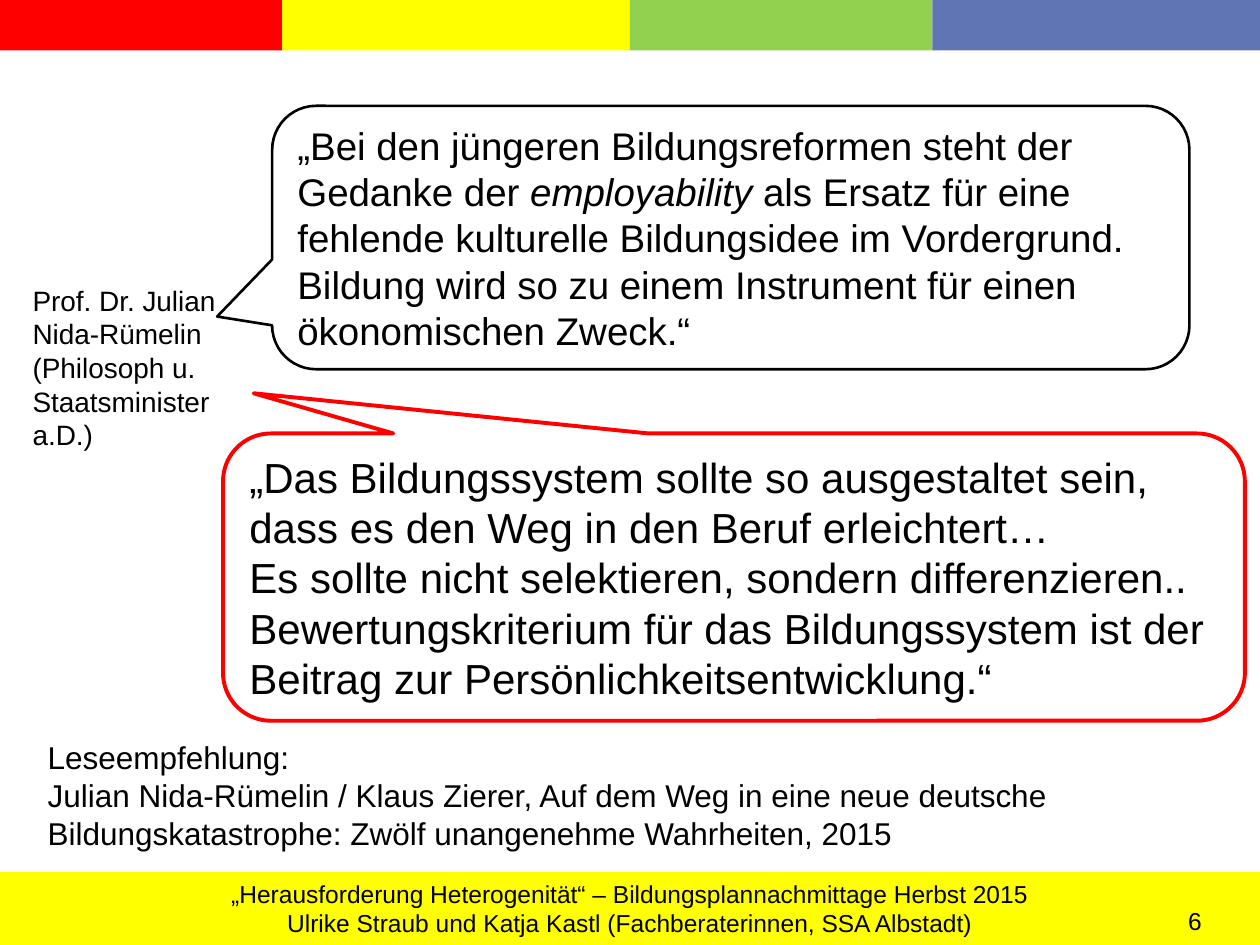
from pptx import Presentation
from pptx.dml.color import RGBColor
from pptx.enum.shapes import MSO_SHAPE
from pptx.enum.text import MSO_ANCHOR, PP_ALIGN
from pptx.util import Inches, Pt

RECTANGLE = MSO_SHAPE.RECTANGLE
CALLOUT = MSO_SHAPE.ROUNDED_RECTANGULAR_CALLOUT
LEFT, CENTER = PP_ALIGN.LEFT, PP_ALIGN.CENTER
TOP, MIDDLE = MSO_ANCHOR.TOP, MSO_ANCHOR.MIDDLE

BLACK = RGBColor(0x00, 0x00, 0x00)
RED = RGBColor(0xFF, 0x00, 0x00)
YELLOW = RGBColor(0xFF, 0xFF, 0x00)
GREEN = RGBColor(0x92, 0xD0, 0x50)
BLUE = RGBColor(0x60, 0x76, 0xB4)

COLUMNS, ROWS = 100, 75
CELL = Inches(0.1)
BLANK_LAYOUT = 6

STRIPES = [(0, 22.4, RED), (22.4, 27.6, YELLOW), (50, 24, GREEN), (74, 26, BLUE)]
REFORM_QUOTE = (
    "„Bei den jüngeren Bildungsreformen steht der Gedanke der *employability* als Ersatz "
    "für eine fehlende kulturelle Bildungsidee im Vordergrund. Bildung wird so zu einem "
    "Instrument für einen ökonomischen Zweck.“"
)
SYSTEM_QUOTE = (
    "„Das Bildungssystem sollte so ausgestaltet sein, dass es den Weg in den Beruf "
    "erleichtert…\nEs sollte nicht selektieren, sondern differenzieren.. "
    "Bewertungskriterium für das Bildungssystem ist der Beitrag zur "
    "Persönlichkeitsentwicklung.“"
)
SPEAKER = ["Prof. Dr. Julian Nida-Rümelin", "(Philosoph u.", "Staatsminister a.D.)"]
READING = [
    "Leseempfehlung:",
    "Julian Nida-Rümelin / Klaus Zierer, Auf dem Weg in eine neue deutsche "
    "Bildungskatastrophe: Zwölf unangenehme Wahrheiten, 2015",
]
FOOTER = [
    "„Herausforderung Heterogenität“ – Bildungsplannachmittage Herbst 2015",
    "Ulrike Straub und Katja Kastl (Fachberaterinnen, SSA Albstadt)",
]


def to_lengths(box):
    """Turn a box in grid columns and rows into slide lengths."""
    return [round(value * CELL) for value in box]


def set_values(target, values):
    """Set each attribute named in a dict of format values."""
    for name, value in values.items():
        setattr(target, name, value)


def write_line(paragraph, line, size):
    """Write one line of text, with the parts between asterisks in italics."""
    for index, part in enumerate(line.split("*")):
        run = paragraph.add_run()
        run.text = part
        set_values(run.font, {"name": "Arial", "size": Pt(size), "italic": index % 2 == 1})
        run.font.color.rgb = BLACK


def write_text(shape, paragraphs, size, alignment=LEFT, **frame_values):
    """Fill a shape with formatted paragraphs."""
    frame = shape.text_frame
    set_values(frame, {"word_wrap": True, **frame_values})
    for index, text in enumerate(paragraphs):
        paragraph = frame.add_paragraph() if index else frame.paragraphs[0]
        paragraph.alignment = alignment
        for number, line in enumerate(text.split("\n")):
            if number:
                paragraph.add_line_break()
            write_line(paragraph, line, size)


def add_band(slide, box, color):
    """Add a plain coloured rectangle."""
    band = slide.shapes.add_shape(RECTANGLE, *to_lengths(box))
    band.shadow.inherit = False
    band.fill.solid()
    band.fill.fore_color.rgb = color
    band.line.fill.background()
    return band


def add_note(slide, box, paragraphs, size, **frame_values):
    """Add a text box with wrapped paragraphs."""
    note = slide.shapes.add_textbox(*to_lengths(box))
    write_text(note, paragraphs, size, vertical_anchor=TOP, **frame_values)


def add_header(slide, box):
    """Place the four colour stripes along the top of the box."""
    left, top, width, height = box
    for start, span, color in STRIPES:
        share = width / COLUMNS
        add_band(slide, (left + start * share, top, span * share, height), color)


def add_footer(slide, box):
    """Place the event line and the page number in the bottom band."""
    left, top, width, height = box
    band = add_band(slide, box, YELLOW)
    write_text(band, FOOTER, 14, CENTER, vertical_anchor=MIDDLE, word_wrap=False)
    number_box = (left + width * 0.943, top + 2.2, width * 0.055, 3.4)
    add_note(slide, number_box, ["6"], 14, margin_left=0, margin_right=0)


def add_quote(slide, box, quote, size, color, line_width, pointer):
    """Place a quotation in a rounded speech bubble."""
    bubble = slide.shapes.add_shape(CALLOUT, *to_lengths(box))
    bubble.shadow.inherit = False
    bubble.fill.background()
    bubble.line.color.rgb = color
    bubble.line.width = Pt(line_width)
    for index, value in enumerate(pointer):
        bubble.adjustments[index] = value
    write_text(bubble, [quote], size, vertical_anchor=MIDDLE)


def main():
    """Build the slide and save it."""
    presentation = Presentation()
    set_values(presentation, {"slide_width": COLUMNS * CELL, "slide_height": ROWS * CELL})
    slide = presentation.slides.add_slide(presentation.slide_layouts[BLANK_LAYOUT])
    add_footer(slide, (0, 69.2, COLUMNS, 5.8))
    add_header(slide, (0, 0, COLUMNS, 4))
    add_quote(slide, (21.6, 8.4, 72.8, 20.9), REFORM_QUOTE, 22, BLACK, 1.5, (-0.56, 0.3))
    add_quote(slide, (17.7, 34.4, 81.1, 22.8), SYSTEM_QUOTE, 24, RED, 2.25, (-0.47, -0.64))
    add_note(slide, (1.6, 22, 18.5, 14.5), SPEAKER, 16)
    add_note(slide, (2.8, 58.1, 95.3, 10.1), READING, 18)
    presentation.save("out.pptx")


if __name__ == "__main__":
    main()
